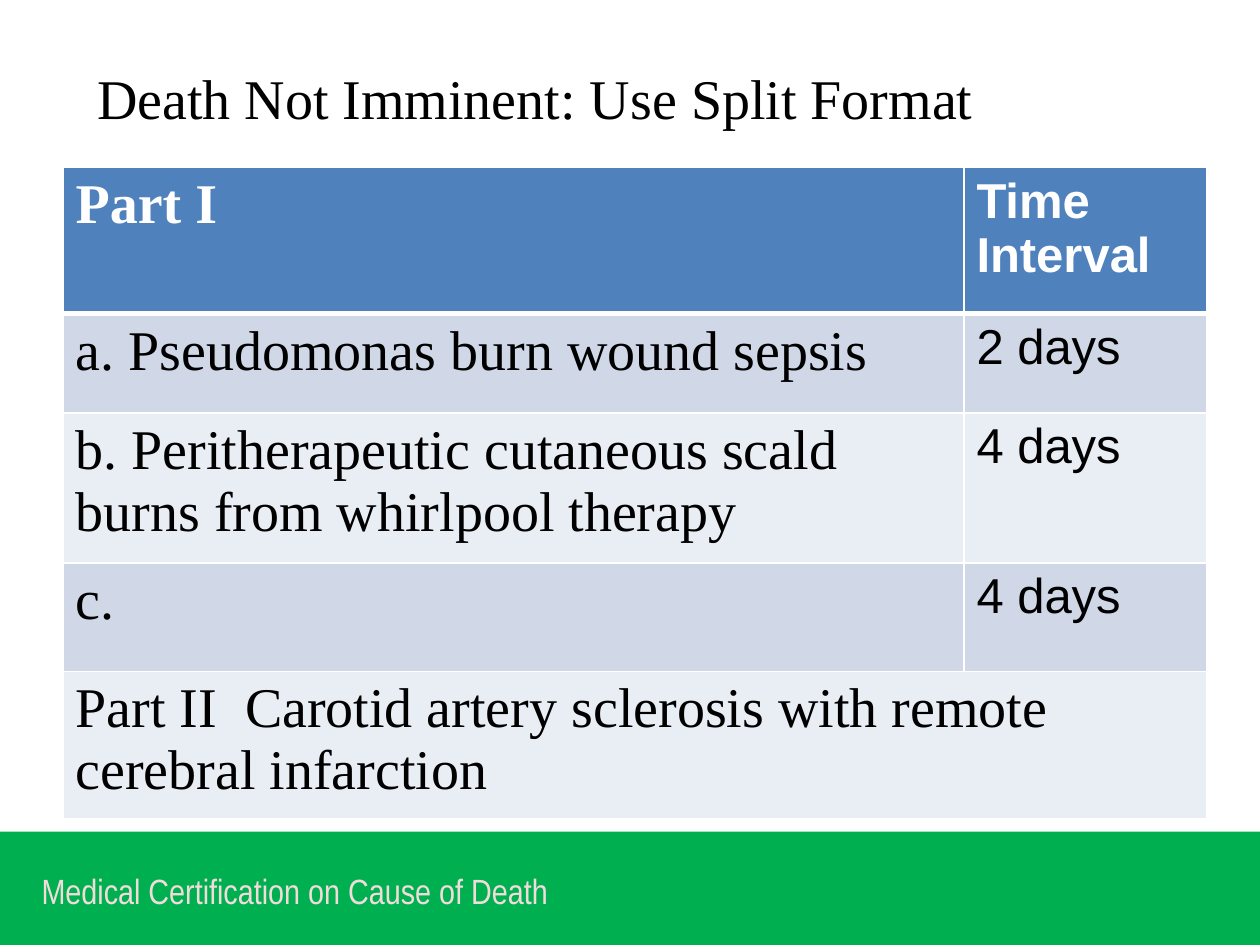
"""Build the slide on splitting a cause of death into Part I and Part II."""
from lxml import etree
from pptx import Presentation
from pptx.dml.color import RGBColor
from pptx.enum.shapes import MSO_SHAPE
from pptx.enum.text import MSO_ANCHOR, PP_ALIGN
from pptx.oxml import parse_xml
from pptx.oxml.ns import nsdecls
from pptx.util import Inches, Pt

RECT = MSO_SHAPE.RECTANGLE
MIDDLE = MSO_ANCHOR.MIDDLE
LEFT = PP_ALIGN.LEFT
SERIF = "Times New Roman"


def color(code):
    """Turn a hex string into a colour."""
    return RGBColor.from_string(code)


def write(frame, text, font=SERIF, size=32, ink="000000", bold=False):
    """Fill a text frame with one formatted, left-aligned paragraph."""
    frame.word_wrap = True
    para = frame.paragraphs[0]
    para.alignment = LEFT
    run = para.add_run()
    run.text = text
    run.font.name = font
    run.font.size = Pt(size)
    run.font.bold = bold
    run.font.color.rgb = color(ink)


deck = Presentation()
deck.slide_width, deck.slide_height = Inches(10), Inches(7.5)
slide = deck.slides.add_slide(deck.slide_layouts[5])
shapes = slide.shapes

band = shapes.add_shape(RECT, Inches(0), Inches(6.6), Inches(10), Inches(0.9))
band.shadow.inherit = False
band.fill.solid()
band.fill.fore_color.rgb = color("00B050")
band.line.fill.background()

foot = shapes.add_textbox(Inches(0.33), Inches(6.9), Inches(5.17), Inches(0.42))
frame = foot.text_frame
frame.margin_left = frame.margin_right = 0
frame.margin_top = frame.margin_bottom = 0
write(frame, "Medical Certification on Cause of Death",
      font="Arial Narrow", size=20, ink="F2DCDB")

title = shapes.title
title.left, title.top = Inches(0.67), Inches(0.42)
title.width, title.height = Inches(9), Inches(0.7)
title.text_frame.vertical_anchor = MIDDLE
write(title.text_frame, "Death Not Imminent: Use Split Format")

rows = [
    ("Part I", "Time Interval", 1.16),
    ("a. Pseudomonas burn wound sepsis", "2 days", 0.79),
    ("b. Peritherapeutic cutaneous scald burns from whirlpool therapy",
     "4 days", 1.19),
    ("c.", "4 days", 0.86),
    ("Part II  Carotid artery sclerosis with remote cerebral infarction",
     "", 1.16),
]
grid = shapes.add_table(len(rows), 2, Inches(0.5), Inches(1.33),
                        Inches(9.08), Inches(5.16)).table
for col, width in zip(grid.columns, (7.15, 1.93)):
    col.width = Inches(width)
grid.cell(4, 0).merge(grid.cell(4, 1))

for i, (cause, time, height) in enumerate(rows):
    grid.rows[i].height = Inches(height)
    head = i == 0
    back = "4F81BD" if head else ("E9EDF4", "D0D8E8")[i % 2]
    wide = {"lnT": 3 if i == 1 else 1, "lnB": 3 if head else 1}
    for j, text in enumerate((cause, time)):
        cell = grid.cell(i, j)
        props = cell._tc.get_or_add_tcPr()
        for side in ("lnL", "lnR", "lnT", "lnB"):
            line = parse_xml(f'<a:{side} {nsdecls("a")}/>')
            line.set("w", str(Pt(wide.get(side, 1))))
            paint = etree.SubElement(line, line.tag.replace(side, "solidFill"))
            etree.SubElement(paint, line.tag.replace(side, "srgbClr"), val="FFFFFF")
            props.append(line)
        cell.fill.solid()
        cell.fill.fore_color.rgb = color(back)
        if text:
            write(cell.text_frame, text, font=("Arial" if j else SERIF),
                  size=28 if j else 32, ink="FFFFFF" if head else "000000",
                  bold=head)

deck.save("out.pptx")
